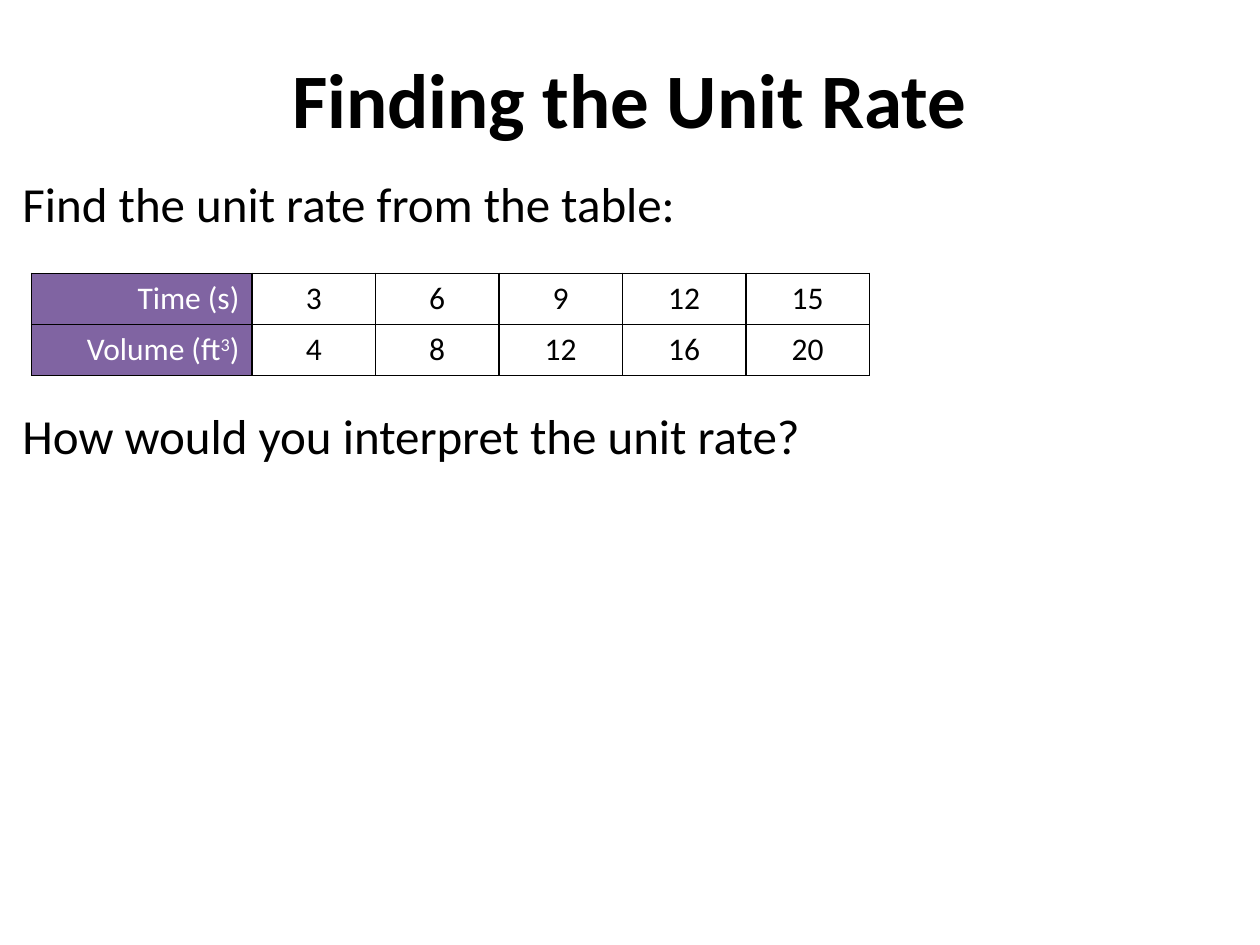
from dataclasses import dataclass

from lxml import etree
from pptx import Presentation
from pptx.dml.color import RGBColor
from pptx.enum import text
from pptx.oxml import ns
from pptx.util import Inches, Pt


@dataclass(frozen=True)
class Theme:
    font: str = "Calibri"
    ink: str = "000000"
    paper: str = "FFFFFF"
    head: str = "8064A2"
    title: int = 44
    body: int = 28
    cell: int = 18


THEME = Theme()
ALIGN = text.PP_ALIGN
ROWS = [
    (("Time (s)",), (3, 6, 9, 12, 15)),
    (("Volume (ft", "3", ")"), (4, 8, 12, 16, 20)),
]


def style(font, size, color=THEME.ink, bold=False):
    form = {"name": THEME.font, "size": Pt(size), "bold": bold}
    for key, value in form.items():
        setattr(font, key, value)
    font.color.rgb = RGBColor.from_string(color)


def write(para, parts, size, align, color=THEME.ink, bold=False):
    """Write the parts as runs; every second one is superscript."""
    para.alignment = align
    for i, part in enumerate(parts):
        run = para.add_run()
        run.text = part
        style(run.font, size, color, bold)
        if i % 2:
            run.font._element.set("baseline", "30000")


def place(shape, left, top, width, height):
    box = {"left": left, "top": top, "width": width, "height": height}
    for key, value in box.items():
        setattr(shape, key, Inches(value))


def add_title(slide, words):
    title = slide.shapes.title
    place(title, 0.5, 0.3, 9, 0.95)
    title.text_frame.vertical_anchor = text.MSO_ANCHOR.MIDDLE
    write(title.text_frame.paragraphs[0], [words], THEME.title,
          ALIGN.CENTER, bold=True)


def add_line(slide, words, top, align):
    box = slide.shapes.add_textbox(
        Inches(0.08), Inches(top), Inches(9.42), Inches(0.57))
    frame = box.text_frame
    frame.word_wrap = True
    frame.auto_size = text.MSO_AUTO_SIZE.SHAPE_TO_FIT_TEXT
    write(frame.paragraphs[0], [words], THEME.body, align)


def add_edges(cell):
    props = cell._tc.get_or_add_tcPr()
    for i, side in enumerate(("lnL", "lnR", "lnT", "lnB")):
        line = etree.Element(ns.qn(f"a:{side}"), w=str(Pt(1)))
        fill = etree.SubElement(line, ns.qn("a:solidFill"))
        etree.SubElement(fill, ns.qn("a:srgbClr"), val=THEME.ink)
        props.insert(i, line)


def fill_cell(cell, parts, align, color, back=None):
    if back:
        cell.fill.solid()
        cell.fill.fore_color.rgb = RGBColor.from_string(back)
    else:
        cell.fill.background()
    write(cell.text_frame.paragraphs[0], parts, THEME.cell, align, color)
    add_edges(cell)


def add_rates(slide):
    count = len(ROWS[0][1])
    table = slide.shapes.add_table(
        len(ROWS), count + 1, Inches(0.25), Inches(2.17),
        Inches(6.67), Inches(0.81)).table
    table.first_row = table.horz_banding = False
    for i, col in enumerate(table.columns):
        col.width = Inches(0.98 if i else 1.75)
    for r, (label, values) in enumerate(ROWS):
        fill_cell(table.cell(r, 0), label, ALIGN.RIGHT,
                  THEME.paper, THEME.head)
        for c, value in enumerate(values, 1):
            fill_cell(table.cell(r, c), [str(value)], ALIGN.CENTER, THEME.ink)


def main():
    deck = Presentation()
    deck.slide_width, deck.slide_height = Inches(10), Inches(7.5)
    slide = deck.slides.add_slide(deck.slide_layouts[5])

    # Title and task
    add_title(slide, "Finding the Unit Rate")
    add_line(slide, "Find the unit rate from the table:", 1.33, ALIGN.LEFT)

    # Time and volume table
    add_rates(slide)

    # Closing question
    add_line(slide, "How would you interpret the unit rate?", 3.17,
             ALIGN.JUSTIFY)
    deck.save("out.pptx")


if __name__ == "__main__":
    main()
